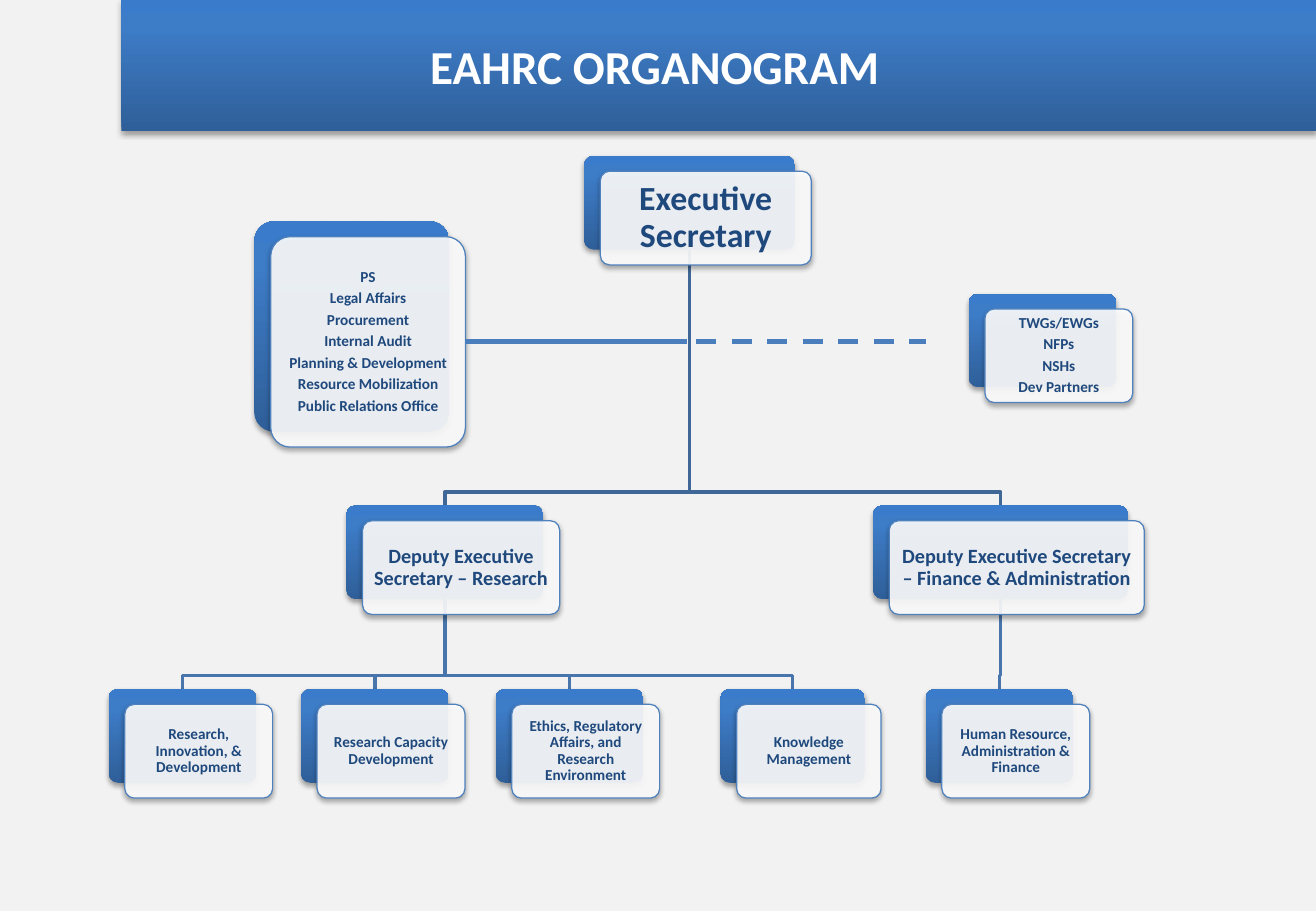
from dataclasses import dataclass

from lxml import etree
from pptx import Presentation
from pptx.dml.color import RGBColor
from pptx.enum import dml, shapes, text
from pptx.oxml import ns, parse_xml
from pptx.util import Cm, Pt


@dataclass(frozen=True)
class Theme:
    font: str = "Calibri"
    background: str = "F2F2F2"
    white: str = "FFFFFF"
    ink: str = "1F497D"
    outline: str = "4F81BD"
    link: str = "4B7EBC"
    upper_branch: str = "3F6797"
    lower_branch: str = "4875AC"
    gradient: tuple = ((0, "2F5F99"), (80, "3D7CC7"), (100, "3A7CCB"))
    title: int = 28
    chief: int = 20
    deputy: int = 12
    unit: int = 9


@dataclass(frozen=True)
class Box:
    """Position and size in centimetres."""
    x: float
    y: float
    w: float
    h: float = 1.96

    @property
    def mid(self):
        return self.x + self.w / 2

    @property
    def bottom(self):
        return self.y + self.h

    def moved(self, dx, dy):
        return Box(self.x + dx, self.y + dy, self.w, self.h)

    def emu(self):
        return Cm(self.x), Cm(self.y), Cm(self.w), Cm(self.h)


THEME = Theme()
CARD_SHIFT = (0.34, 0.32)
INSETS = {THEME.chief: 0.26, THEME.deputy: 0.18, THEME.unit: 0.15}
A_NS = ns.nsdecls("a")


def rgb(value):
    return RGBColor.from_string(value)


# Formatting helpers
def set_gradient(sp):
    sp.fill.gradient()
    sp.fill.gradient_angle = 90
    stops = sp._element.spPr.find(".//" + ns.qn("a:gsLst"))
    for stop in list(stops):
        stops.remove(stop)
    for pos, color in THEME.gradient:
        stops.append(parse_xml(
            f'<a:gs {A_NS} pos="{pos * 1000}"><a:srgbClr val="{color}"/></a:gs>'))
    sp._element.spPr.find(".//" + ns.qn("a:lin")).set("ang", "16200000")
    sp.line.fill.background()


def set_shadow(sp):
    sp.shadow.inherit = False
    sp._element.spPr.find(ns.qn("a:effectLst")).append(parse_xml(
        f'<a:outerShdw {A_NS} blurRad="{Pt(3.1)}" dist="{Pt(1.8)}" dir="5400000" '
        'rotWithShape="0"><a:srgbClr val="000000"><a:alpha val="35000"/>'
        '</a:srgbClr></a:outerShdw>'))


def set_font(p, size, color):
    p.font.name = THEME.font
    p.font.size = Pt(size)
    p.font.bold = True
    p.font.color.rgb = rgb(color)


# Title band
def add_title_band(s, box, title):
    band = s.shapes.add_shape(shapes.MSO_SHAPE.RECTANGLE, *box.emu())
    set_gradient(band)
    set_shadow(band)
    s.shapes._spTree.insert(2, band._element)

    sp = s.shapes.title
    sp.left, sp.top, sp.width, sp.height = Box(box.x + 6.2, 0.64, 11.23, 1.45).emu()
    tf = sp.text_frame
    tf.text = title
    tf.auto_size = text.MSO_AUTO_SIZE.NONE
    tf.vertical_anchor = text.MSO_ANCHOR.MIDDLE
    p = tf.paragraphs[0]
    p.alignment = text.PP_ALIGN.LEFT
    set_font(p, THEME.title, THEME.white)


# Elbow from the bottom of a parent to the top of a child
def add_branch(s, parent, child, color):
    turn = child.y - 0.28
    points = [(parent.mid, parent.bottom), (parent.mid, turn),
              (child.mid, turn), (child.mid, child.y)]
    points = [(Cm(x), Cm(y)) for x, y in points]
    builder = s.shapes.build_freeform(*points[0])
    builder.add_line_segments(points[1:], close=False)
    sp = builder.convert_to_shape()
    sp.fill.background()
    sp.line.color.rgb = rgb(color)
    sp.line.width = Pt(2)
    sp.shadow.inherit = False


# Card: a blue plate with a translucent text panel on top
def add_card(s, box, lines, size):
    plate = s.shapes.add_shape(shapes.MSO_SHAPE.ROUNDED_RECTANGLE, *box.emu())
    set_gradient(plate)
    panel = s.shapes.add_shape(shapes.MSO_SHAPE.ROUNDED_RECTANGLE,
                               *box.moved(*CARD_SHIFT).emu())
    panel.fill.solid()
    panel.fill.fore_color.rgb = rgb(THEME.white)
    color = panel._element.spPr.find(ns.qn("a:solidFill"))[0]
    etree.SubElement(color, ns.qn("a:alpha"), val="90000")
    panel.line.color.rgb = rgb(THEME.outline)
    panel.line.width = Pt(0.75)
    for sp in (plate, panel):
        sp.adjustments[0] = 0.1
        set_shadow(sp)

    tf = panel.text_frame
    tf.word_wrap = True
    tf.vertical_anchor = text.MSO_ANCHOR.MIDDLE
    tf.margin_left = tf.margin_right = Cm(INSETS[size])
    tf.margin_top = tf.margin_bottom = Cm(INSETS[size])
    tf.text = "\n".join(lines)
    for p in tf.paragraphs:
        p.alignment = text.PP_ALIGN.CENTER
        p.line_spacing = 0.9
        set_font(p, size, THEME.ink)
    for p in tf.paragraphs[:-1]:
        p.space_after = Pt(3)
    return panel


# Horizontal link to the advisory cards
def add_link(s, x1, x2, y, dashed=False):
    line = s.shapes.add_connector(shapes.MSO_CONNECTOR.STRAIGHT, x1, y, x2, y)
    line.line.color.rgb = rgb(THEME.link)
    line.line.width = Pt(3)
    if dashed:
        line.line.dash_style = dml.MSO_LINE.DASH
    etree.SubElement(line._element.spPr, ns.qn("a:effectLst"))
    return line


def add_organogram(s, box):
    chief = box.moved(12.21, 0)
    chief = Box(chief.x, chief.y, 4.41)
    deputy_y, unit_y = box.y + 7.31, box.y + 11.15
    research = Box(box.x + 7.24, deputy_y, 4.12)
    finance = Box(box.x + 18.25, deputy_y, 5.33)
    units = [
        (research, 2.27, 3.09, "Research, Innovation, & Development"),
        (research, 6.29, 3.09, "Research Capacity Development"),
        (research, 10.36, 3.09, "Ethics, Regulatory Affairs, and Research Environment"),
        (research, 15.06, 3.02, "Knowledge Management"),
        (finance, 19.35, 3.09, "Human Resource, Administration & Finance"),
    ]
    units = [(boss, Box(box.x + x, unit_y, w), name) for boss, x, w, name in units]

    # Branches lie behind the cards
    for boss, unit, _ in units:
        add_branch(s, boss, unit, THEME.lower_branch)
    for deputy in (research, finance):
        add_branch(s, chief, deputy, THEME.upper_branch)

    # Line of command
    add_card(s, chief, ["Executive Secretary"], THEME.chief)
    add_card(s, research, ["Deputy Executive Secretary – Research"], THEME.deputy)
    add_card(s, finance, ["Deputy Executive Secretary – Finance & Administration"],
             THEME.deputy)
    for _, unit, name in units:
        add_card(s, unit, [name], THEME.unit)

    # Advisory cards and their links
    add_card(s, Box(box.x + 20.25, box.y + 2.88, 3.09),
             ["TWGs/EWGs", "NFPs", "NSHs", "Dev Partners"], THEME.unit)
    staff = add_card(s, Box(box.x + 5.32, box.y + 1.37, 4.07, 4.4),
                     ["PS", "Legal Affairs", "Procurement", "Internal Audit",
                      "Planning & Development", "Resource Mobilization",
                      "Public Relations Office"], THEME.unit)
    y = staff.top + staff.height // 2
    add_link(s, Cm(box.x + 14.55), Cm(box.x + 19.35), y, dashed=True)
    line = add_link(s, staff.left + staff.width, Cm(chief.mid - 0.06), y)
    line.begin_connect(staff, 3)


def main():
    prs = Presentation()
    prs.slide_width, prs.slide_height = Cm(27.51), Cm(19.05)
    s = prs.slides.add_slide(prs.slide_layouts[5])
    s.background.fill.solid()
    s.background.fill.fore_color.rgb = rgb(THEME.background)
    add_title_band(s, Box(2.54, 0, 24.97, 2.75), "EAHRC ORGANOGRAM")
    add_organogram(s, Box(0, 3.26, 27.51, 13.5))
    prs.save("out.pptx")


if __name__ == "__main__":
    main()
